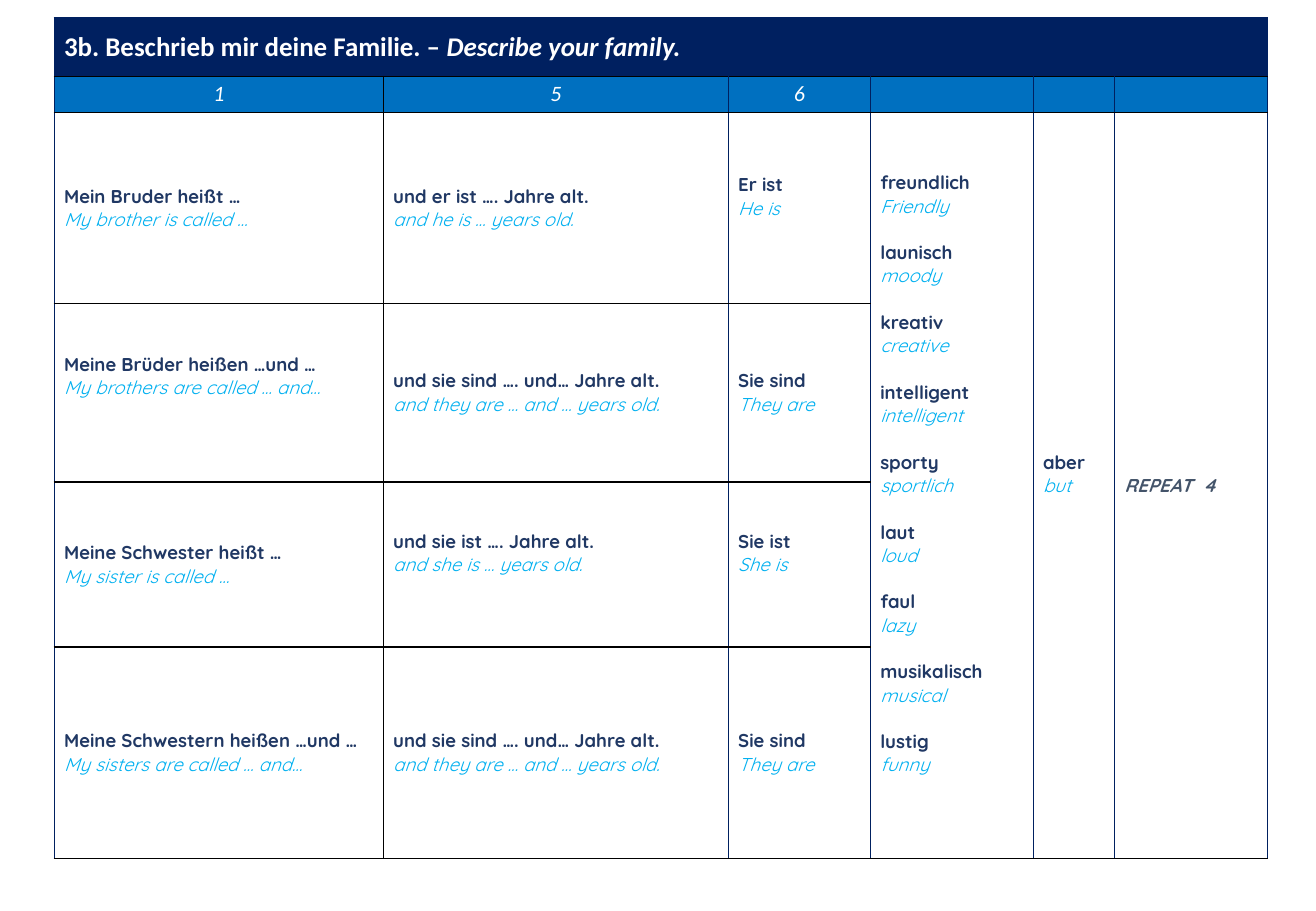
from lxml import etree
from pptx import Presentation
from pptx.dml.color import RGBColor
from pptx.enum.text import MSO_ANCHOR as ANCHOR, PP_ALIGN as ALIGN
from pptx.oxml.ns import qn
from pptx.util import Pt

NAVY, BLUE, BLACK, WHITE = "002060", "0070C0", "000000", "FFFFFF"
LINE = 13.8  # height of one line of 11 pt text

TITLE = dict(name="Calibri", size=16, color=WHITE, bold=True, italic=False)
SUBTITLE = dict(TITLE, italic=True)
NUMBER = dict(TITLE, size=13, bold=False, italic=True)
GERMAN = dict(name="Quicksand", size=11, color="203864", bold=True, italic=False)
ENGLISH = dict(GERMAN, color="00B0F0", bold=False, italic=True)
REPEAT = dict(GERMAN, color="44546A", italic=True)

COLUMNS = [195.1, 204.5, 84.2, 96.5, 48.2, 90.7]
ROWS = [34.6, 21.6, 113, 105.8, 97.9, 125.3]
NUMBERS = ["1", "5", "6", "", "", ""]

# One row per relative; each cell: German, English, extra space below
SENTENCES = [
    [("Mein Bruder heißt …", "My brother is called …", 0),
     ("und er ist …. Jahre alt.", "and he is … years old.", 0),
     ("Er ist", "He is", LINE)],
    [("Meine Brüder heißen …und …", "My brothers are called … and…", 20),
     ("und sie sind …. und… Jahre alt.", "and they are … and … years old.", 0),
     ("Sie sind", "They are", 0)],
    [("Meine Schwester heißt …", "My sister is called …", 0),
     ("und sie ist …. Jahre alt.", "and she is … years old.", LINE),
     ("Sie ist", "She is", LINE)],
    [("Meine Schwestern heißen …und …", "My sisters are called … and…", 0),
     ("und sie sind …. und… Jahre alt.", "and they are … and … years old.", 0),
     ("Sie sind", "They are", 0)],
]
ADJECTIVES = [
    ("freundlich", "Friendly"), ("launisch", "moody"), ("kreativ", "creative"),
    ("intelligent", "intelligent"), ("sporty", "sportlich"), ("laut", "loud"),
    ("faul", "lazy"), ("musikalisch", "musical"), ("lustig", "funny"),
]


def rgb(value):
    return RGBColor.from_string(value)


class SentenceTable:
    def __init__(self, s, left, top):
        frame = s.shapes.add_table(len(ROWS), len(COLUMNS), Pt(left), Pt(top),
                                   Pt(sum(COLUMNS)), Pt(sum(ROWS)))
        self.table = frame.table
        self.table.first_row = self.table.horz_banding = False
        for column, width in zip(self.table.columns, COLUMNS):
            column.width = Pt(width)
        for row, height in zip(self.table.rows, ROWS):
            row.height = Pt(height)
        for row in range(len(ROWS)):
            for col in range(len(COLUMNS)):
                self.borders(row, col)

    def borders(self, row, col):
        inner = row > 0
        colors = dict(lnL=BLACK if inner and col == 1 else NAVY,
                      lnR=BLACK if inner and col == 0 else NAVY,
                      lnT=BLACK if inner else NAVY,
                      lnB=BLACK)
        tc_pr = self.table.cell(row, col)._tc.get_or_add_tcPr()
        for side, color in colors.items():
            ln = etree.SubElement(tc_pr, qn(f"a:{side}"), w=str(Pt(1)))
            fill = etree.SubElement(ln, qn("a:solidFill"))
            etree.SubElement(fill, qn("a:srgbClr"), val=color)

    def cell(self, row, col, paragraphs, fill=None, anchor=ANCHOR.MIDDLE,
             align=ALIGN.LEFT, below=0, gap=0):
        """Fill a cell; a paragraph is a list of (text, style), gap follows each pair."""
        cell = self.table.cell(row, col)
        margins = dict(margin_left=5.8, margin_right=5.8,
                       margin_top=2.9, margin_bottom=2.9 + below)
        for name, value in margins.items():
            setattr(cell, name, Pt(value))
        cell.vertical_anchor = anchor
        if fill:
            cell.fill.solid()
            cell.fill.fore_color.rgb = rgb(fill)
        else:
            cell.fill.background()
        tf = cell.text_frame
        for i, runs in enumerate(paragraphs):
            p = tf.add_paragraph() if i else tf.paragraphs[0]
            p.alignment = align
            if gap and i % 2 and i < len(paragraphs) - 1:
                p.space_after = Pt(gap)
            for text, style in runs:
                self.run(p, text, style)

    def run(self, p, text, style):
        if not text:  # keeps the empty cell's line as low as its row
            end = etree.SubElement(p._p, qn("a:endParaRPr"))
            end.set("sz", str(style["size"] * 100))
            return
        r = p.add_run()
        r.text = text
        for name, value in style.items():
            if name == "color":
                r.font.color.rgb = rgb(value)
            else:
                setattr(r.font, name, Pt(value) if name == "size" else value)

    def pairs(self, row, col, words, **layout):
        """Write German lines, each with its English line underneath."""
        lines = [[(text, style)] for pair in words
                 for text, style in zip(pair, (GERMAN, ENGLISH))]
        self.cell(row, col, lines, **layout)

    def merge(self, first, last):
        self.table.cell(*first).merge(self.table.cell(*last))


def main():
    prs = Presentation()
    prs.slide_width, prs.slide_height = Pt(780), Pt(540)
    s = prs.slides.add_slide(prs.slide_layouts[6])
    t = SentenceTable(s, 32.2, 10.6)

    t.merge((0, 0), (0, 5))
    for col in (3, 4, 5):
        t.merge((2, col), (5, col))

    t.cell(0, 0, [[("3b. Beschrieb mir deine Familie. – ", TITLE),
                   ("Describe your family.", SUBTITLE)]], fill=NAVY)
    for col, number in enumerate(NUMBERS):
        t.cell(1, col, [[(number, NUMBER)]], fill=BLUE, anchor=ANCHOR.TOP,
               align=ALIGN.CENTER)
    for row, sentence in enumerate(SENTENCES, 2):
        for col, (german, english, below) in enumerate(sentence):
            t.pairs(row, col, [(german, english)], below=below)
    t.pairs(2, 3, ADJECTIVES, below=LINE, gap=LINE)
    t.pairs(2, 4, [("aber", "but")], below=LINE)
    t.cell(2, 5, [[("REPEAT  4", REPEAT)]])

    prs.save("out.pptx")


if __name__ == "__main__":
    main()
